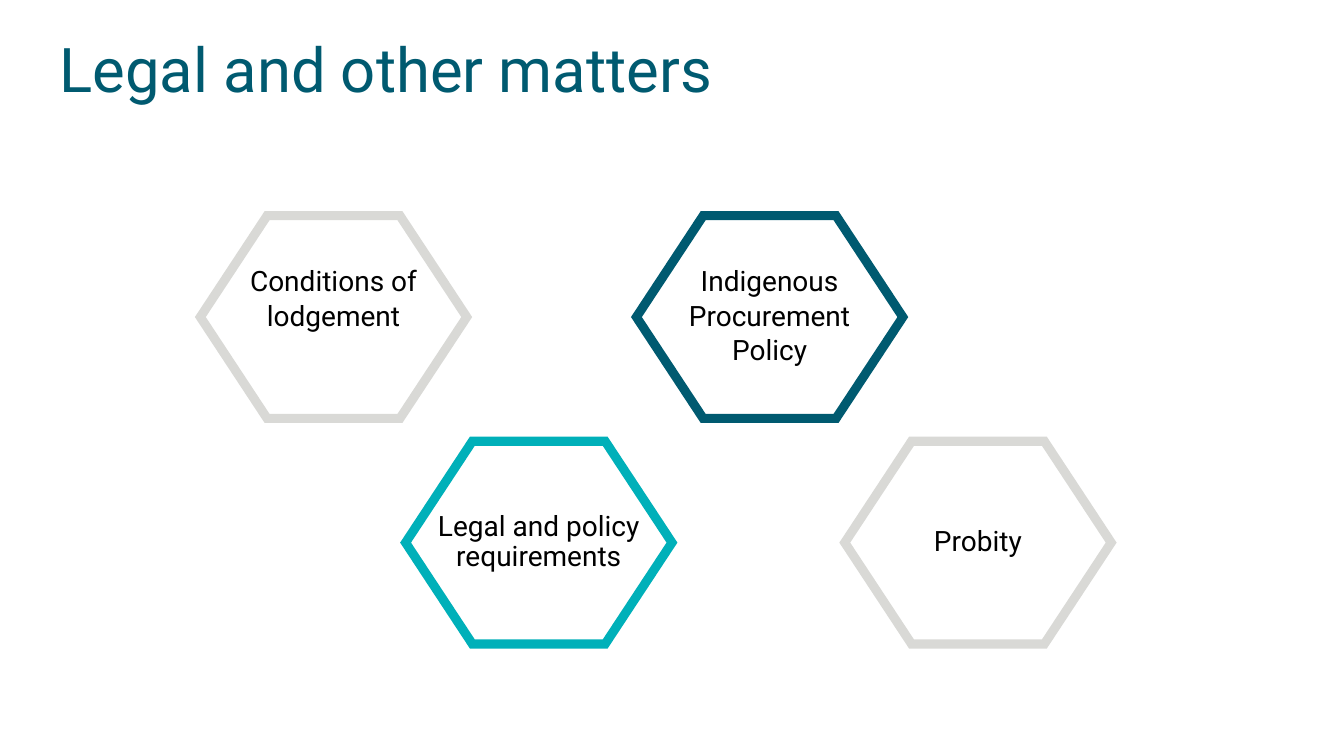
import pptx
import pptx.dml.color
import pptx.enum.text
import pptx.oxml
import pptx.oxml.ns
import pptx.util

Pt = pptx.util.Pt
ALIGN = pptx.enum.text.PP_ALIGN
ANCHOR = pptx.enum.text.MSO_ANCHOR

TEAL, AQUA, GREY = "005A70", "00B0B9", "D9D9D6"
WHITE, BLACK = "FFFFFF", "000000"
HEXAGON_WIDTH, HEXAGON_HEIGHT, HEXAGON_CORNER = 190.3, 144.8, 47.7
UPPER_ROW, LOWER_ROW = 154.1, 315.2
LINE_STEP = 24.6


def color(value):
    return pptx.dml.color.RGBColor.from_string(value)


def write(frame, text, size=20, fill=BLACK, align=ALIGN.LEFT, anchor=ANCHOR.MIDDLE,
          insets=(0, 0, 0, 0), spacing=1.0, after=0):
    """Fill a text frame, one paragraph for each line of the text."""
    frame.word_wrap = True
    frame.vertical_anchor = anchor
    frame.margin_left, frame.margin_top, frame.margin_right, frame.margin_bottom = map(Pt, insets)
    for index, line in enumerate(text.split("\n")):
        para = frame.paragraphs[0] if index == 0 else frame.add_paragraph()
        para.alignment = align
        para.line_spacing = spacing
        para.space_after = Pt(after)
        span = para.add_run()
        span.text = line
        span.font.name = "Roboto"
        span.font.size = Pt(size)
        span.font.color.rgb = color(fill)


class Page:
    def __init__(self, deck):
        self.shapes = deck.slides.add_slide(deck.slide_layouts[6]).shapes

    def title(self, text):
        box = self.shapes.add_textbox(Pt(42.5), Pt(21.6), Pt(827.3), Pt(53.3))
        write(box.text_frame, text, size=44, fill=TEAL, anchor=ANCHOR.BOTTOM)

    def hexagon(self, left, top, text, outline, lift=0):
        """Draw a labelled hexagon; lift is extra room kept below the label."""
        right, bottom = left + HEXAGON_WIDTH, top + HEXAGON_HEIGHT
        middle = top + HEXAGON_HEIGHT / 2
        near, far = left + HEXAGON_CORNER, right - HEXAGON_CORNER
        builder = self.shapes.build_freeform(Pt(far), Pt(top))
        corners = [(near, top), (left, middle), (near, bottom), (far, bottom), (right, middle)]
        builder.add_line_segments([(Pt(x), Pt(y)) for x, y in corners], close=True)
        shape = builder.convert_to_shape()
        shape.shadow.inherit = False
        shape.fill.solid()
        shape.fill.fore_color.rgb = color(WHITE)
        shape.line.color.rgb = color(outline)
        shape.line.width = Pt(6.5)
        line = shape.line.fill._xPr
        line.append(pptx.oxml.parse_xml(
            f'<a:miter {pptx.oxml.ns.nsdecls("a")} lim="800000"/>'))
        write(shape.text_frame, text, align=ALIGN.CENTER,
              insets=(3, 3.6, 3, 3.6 + lift), spacing=0.9, after=3)


def main():
    deck = pptx.Presentation()
    deck.slide_width, deck.slide_height = Pt(960), Pt(540)
    page = Page(deck)
    page.title("Legal and other matters")
    page.hexagon(603.4, LOWER_ROW, "Probity", GREY)
    page.hexagon(289.7, LOWER_ROW, "Legal and policy requirements", AQUA)
    page.hexagon(143.1, UPPER_ROW, "Conditions of\nlodgement", GREY, lift=LINE_STEP)
    page.hexagon(454.6, UPPER_ROW, "Indigenous\nProcurement\nPolicy", TEAL)
    deck.save("out.pptx")


if __name__ == "__main__":
    main()
